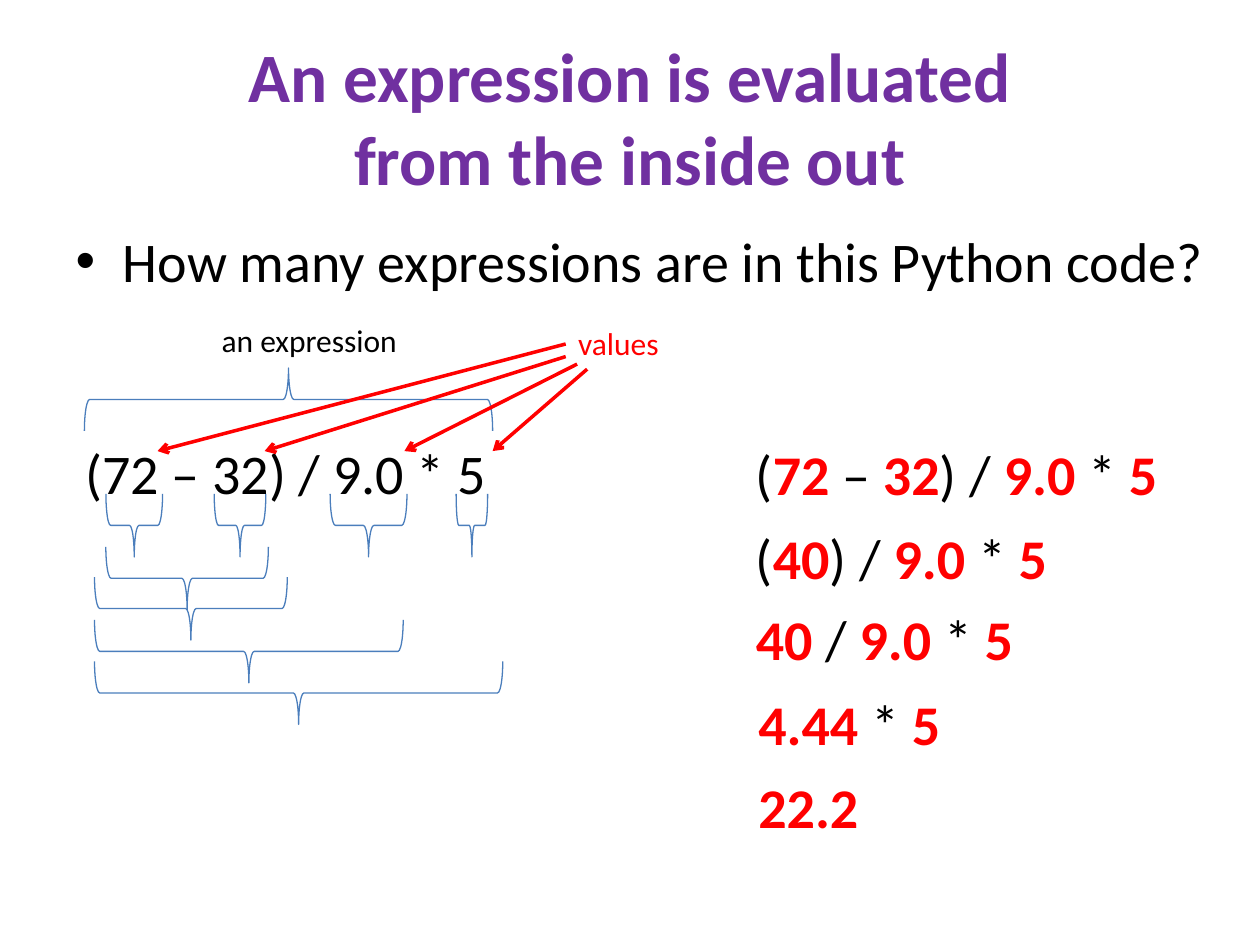
from copy import deepcopy
from dataclasses import dataclass
from itertools import groupby

from lxml.etree import SubElement
from pptx import Presentation
from pptx.dml.color import RGBColor
from pptx.enum.shapes import MSO_CONNECTOR as Connector, MSO_SHAPE as Shape
from pptx.enum.text import MSO_ANCHOR as Anchor, MSO_AUTO_SIZE as AutoSize, PP_ALIGN as Align
from pptx.oxml.ns import qn
from pptx.util import Inches, Pt

PURPLE = RGBColor(0x70, 0x30, 0xA0)
BLACK = RGBColor(0, 0, 0)
RED = RGBColor(0xFF, 0, 0)
BLUE = RGBColor(0x4B, 0x7E, 0xBC)
FONT = "Calibri"
CODE_SIZE = 32
LABEL_SIZE = 18
BRACE_DEPTH = 0.5


@dataclass
class Brace:
    """The area a horizontal brace covers, in inches."""
    left: float
    top: float
    width: float
    points_up: bool = False


@dataclass
class Label:
    text: str
    left: float
    top: float
    width: float
    height: float = 0.64
    size: float = CODE_SIZE
    color: RGBColor = BLACK
    wrap: bool = False
    mark_values: bool = False


@dataclass
class Arrow:
    start: tuple[float, float]
    end: tuple[float, float]


TERM_TOP = 3.92
BRACES = [
    Brace(0.67, 2.92, 3.24, points_up=True),
    # Single values
    Brace(0.84, TERM_TOP, 0.45),
    Brace(1.7, TERM_TOP, 0.41),
    Brace(2.62, TERM_TOP, 0.61),
    Brace(3.62, TERM_TOP, 0.25),
    # Nested expressions, from the inside out
    Brace(0.84, 4.34, 1.29),
    Brace(0.75, 4.58, 1.53),
    Brace(0.75, 4.92, 2.45),
    Brace(0.75, 5.25, 3.24),
]
LABELS = [
    Label("an expression", 1.66, 2.5, 1.61, 0.4, LABEL_SIZE),
    Label("values", 4.49, 2.52, 0.85, 0.4, LABEL_SIZE, RED),
    Label("(72 – 32) / 9.0 * 5", 0.58, 3.43, 3.67, wrap=True),
    # Evaluation steps
    Label("(72 – 32) / 9.0 * 5", 5.9, 3.44, 3.42, mark_values=True),
    Label("(40) / 9.0 * 5", 5.9, 4.11, 2.53, mark_values=True),
    Label("40 / 9.0 * 5", 5.9, 4.75, 2.26, mark_values=True),
    Label("4.44 * 5", 5.92, 5.42, 1.66, mark_values=True),
    Label("22.2", 5.92, 6.08, 1, mark_values=True),
]
ARROW_TIP_TOP = 3.58
ARROWS = [
    Arrow((4.49, 2.73), (1.25, ARROW_TIP_TOP)),
    Arrow((4.49, 2.83), (2.1, ARROW_TIP_TOP)),
    Arrow((4.58, 2.89), (3.21, ARROW_TIP_TOP)),
    Arrow((4.66, 2.93), (3.91, ARROW_TIP_TOP)),
]


def add_span(para, text: str, size: float, color: RGBColor, bold: bool = False):
    span = para.add_run()
    span.text = text
    span.font.name = FONT
    span.font.size = Pt(size)
    span.font.bold = bold
    span.font.color.rgb = color
    return span


def place(box, left: float, top: float, width: float, height: float) -> None:
    box.left, box.top = Inches(left), Inches(top)
    box.width, box.height = Inches(width), Inches(height)


def is_value_char(char: str) -> bool:
    return char.isdigit() or char == "."


def add_label(page, label: Label) -> None:
    box = page.shapes.add_textbox(Inches(label.left), Inches(label.top),
                                  Inches(label.width), Inches(label.height))
    box.text_frame.word_wrap = label.wrap
    box.text_frame.auto_size = AutoSize.SHAPE_TO_FIT_TEXT
    para = box.text_frame.paragraphs[0]
    if label.size == CODE_SIZE:
        para.space_before = Pt(CODE_SIZE * 0.2)
    if not label.mark_values:
        add_span(para, label.text, label.size, label.color)
        return
    for is_value, chars in groupby(label.text, is_value_char):
        add_span(para, "".join(chars), label.size, RED if is_value else BLACK, is_value)


def add_brace(page, brace: Brace) -> None:
    # The shape is upright before it is turned about its centre
    left = brace.left + (brace.width - BRACE_DEPTH) / 2
    top = brace.top + (BRACE_DEPTH - brace.width) / 2
    shape = page.shapes.add_shape(Shape.RIGHT_BRACE, Inches(left), Inches(top),
                                  Inches(BRACE_DEPTH), Inches(brace.width))
    shape.rotation = 270 if brace.points_up else 90
    shape.shadow.inherit = False
    shape.fill.background()
    shape.line.color.rgb = BLUE
    shape.line.width = Pt(0.75)


def add_arrow(page, arrow: Arrow) -> None:
    ends = [Inches(value) for value in arrow.start + arrow.end]
    line = page.shapes.add_connector(Connector.STRAIGHT, *ends)
    line.line.color.rgb = RED
    line.line.width = Pt(2)
    SubElement(line.line._get_or_add_ln(), qn("a:tailEnd"), type="arrow")
    SubElement(line._element.spPr, qn("a:effectLst"))


def fill_title(title) -> None:
    place(title, 0.5, 0.3, 9, 1.25)
    title.text_frame.auto_size = AutoSize.NONE
    title.text_frame.vertical_anchor = Anchor.MIDDLE
    para = title.text_frame.paragraphs[0]
    para.alignment = Align.CENTER
    span = add_span(para, "An expression is evaluated", 39.6, PURPLE, True)
    para.add_line_break()
    # The break takes the size of the text around it
    para._p.findall(qn("a:br"))[0].append(deepcopy(span._r.rPr))
    add_span(para, "from the inside out", 39.6, PURPLE, True)


def fill_body(body) -> None:
    place(body, 0.5, 1.75, 9.25, 4.95)
    body.text_frame.auto_size = AutoSize.NONE
    add_span(body.text_frame.paragraphs[0],
             "How many expressions are in this Python code?", CODE_SIZE, BLACK)


def main() -> None:
    deck = Presentation()
    deck.slide_width, deck.slide_height = Inches(10), Inches(7.5)
    page = deck.slides.add_slide(deck.slide_layouts[1])

    fill_title(page.shapes.title)
    fill_body(page.placeholders[1])
    for brace in BRACES:
        add_brace(page, brace)
    for label in LABELS:
        add_label(page, label)
    for arrow in ARROWS:
        add_arrow(page, arrow)

    deck.save("out.pptx")


if __name__ == "__main__":
    main()
